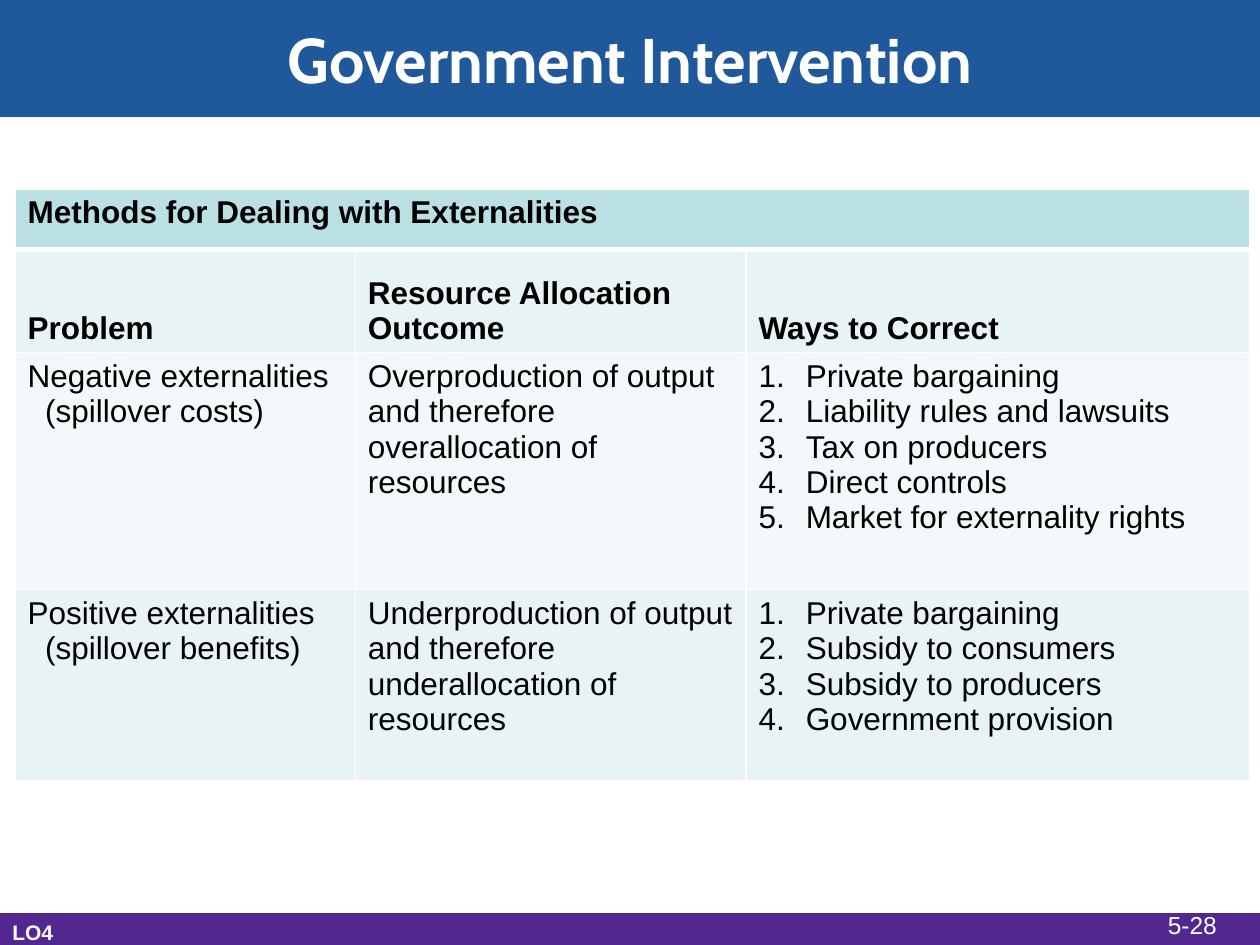
from dataclasses import dataclass

from lxml import etree
from pptx import Presentation
from pptx import util as u
from pptx.dml.color import RGBColor
from pptx.enum import shapes, text
from pptx.oxml import ns

WHITE = RGBColor(0xFF, 0xFF, 0xFF)
BLACK = RGBColor(0x00, 0x00, 0x00)
TITLE_BLUE = RGBColor(0x20, 0x58, 0x9C)
FOOTER_PURPLE = RGBColor(0x52, 0x28, 0x90)
HEADING_TEAL = RGBColor(0xBB, 0xE0, 0xE3)
LIGHT_TEAL = RGBColor(0xE7, 0xF3, 0xF4)
PALE_TEAL = RGBColor(0xF3, 0xF9, 0xFA)

SLIDE_WIDTH, SLIDE_HEIGHT = 720, 540
COLUMN_WIDTHS = (194.4, 223.2, 288)
LIST_INDENT = 27
SECOND_LINE_INDENT = 10


@dataclass(frozen=True)
class Box:
    left: float
    top: float
    width: float
    height: float

    def lengths(self) -> list:
        return [u.Pt(value) for value in (self.left, self.top, self.width, self.height)]


@dataclass(frozen=True)
class Label:
    box: Box
    wording: str
    font: dict
    anchor: text.MSO_ANCHOR = text.MSO_ANCHOR.TOP
    alignment: text.PP_ALIGN = text.PP_ALIGN.LEFT
    wrap: bool = False


@dataclass(frozen=True)
class Row:
    height: float
    fill: RGBColor
    cells: tuple
    bold: bool = False
    anchor: text.MSO_ANCHOR = text.MSO_ANCHOR.TOP
    top_border: float = 1
    bottom_border: float = 1


def font_format(size: float, color: RGBColor, bold: bool = False, name: str = "Arial") -> dict:
    return {"name": name, "size": u.Pt(size), "bold": bold, "color": color}


TITLE_BOX = Box(0, 0, SLIDE_WIDTH, 66.24)
BANDS = (
    (TITLE_BOX, TITLE_BLUE),
    (Box(0, 522, SLIDE_WIDTH, 18), FOOTER_PURPLE),
)
LABELS = (
    Label(TITLE_BOX, "Government Intervention", font_format(36, WHITE, True, "Cabin"),
          text.MSO_ANCHOR.MIDDLE, text.PP_ALIGN.CENTER, True),
    Label(Box(0, 522, 38.16, 21.6), "LO4", font_format(12, WHITE, True)),
    Label(Box(660.24, 516.24, 42.48, 23.76), "5-28", font_format(14, WHITE)),
)
ROWS = (
    Row(34.56, HEADING_TEAL, (("Methods for Dealing with Externalities",),),
        bold=True, bottom_border=3),
    Row(59.04, LIGHT_TEAL, (("Problem",), ("Resource Allocation Outcome",), ("Ways to Correct",)),
        bold=True, anchor=text.MSO_ANCHOR.BOTTOM, top_border=3),
    Row(135.36, PALE_TEAL, (
        ("Negative externalities", "(spillover costs)"),
        ("Overproduction of output and therefore overallocation of resources",),
        ("Private bargaining", "Liability rules and lawsuits", "Tax on producers",
         "Direct controls", "Market for externality rights"))),
    Row(109.44, LIGHT_TEAL, (
        ("Positive externalities", "(spillover benefits)"),
        ("Underproduction of output and therefore underallocation of resources",),
        ("Private bargaining", "Subsidy to consumers", "Subsidy to producers",
         "Government provision"))),
)


def apply_font(font, values: dict) -> None:
    for name, value in values.items():
        if name == "color":
            font.color.rgb = value
        else:
            setattr(font, name, value)


def add_band(slide, box: Box, color: RGBColor) -> None:
    shape = slide.shapes.add_shape(shapes.MSO_SHAPE.RECTANGLE, *box.lengths())
    shape.shadow.inherit = False
    shape.fill.solid()
    shape.fill.fore_color.rgb = color
    shape.line.color.rgb = color
    shape.line.width = u.Pt(0.75)


def add_label(slide, label: Label) -> None:
    frame = slide.shapes.add_textbox(*label.box.lengths()).text_frame
    frame.word_wrap = label.wrap
    frame.vertical_anchor = label.anchor
    paragraph = frame.paragraphs[0]
    paragraph.alignment = label.alignment
    run = paragraph.add_run()
    run.text = label.wording
    apply_font(run.font, label.font)


def set_borders(cell, row: Row) -> None:
    """Put white lines in front of the fill, in the order the schema asks for."""
    properties = cell._tc.get_or_add_tcPr()
    widths = {"lnL": 1, "lnR": 1, "lnT": row.top_border, "lnB": row.bottom_border}
    for position, (tag, width) in enumerate(widths.items()):
        line = etree.Element(ns.qn(f"a:{tag}"), w=str(u.Pt(width)))
        fill = etree.SubElement(line, ns.qn("a:solidFill"))
        etree.SubElement(fill, ns.qn("a:srgbClr"), val=str(WHITE))
        properties.insert(position, line)


def set_indent(paragraph, left: float, first_line: float = 0, numbered: bool = False) -> None:
    properties = paragraph._p.get_or_add_pPr()
    properties.set("marL", str(u.Pt(left)))
    properties.set("indent", str(u.Pt(first_line)))
    if numbered:
        etree.SubElement(properties, ns.qn("a:buFont"), typeface="+mj-lt")
        etree.SubElement(properties, ns.qn("a:buAutoNum"), type="arabicPeriod")


def fill_cell(cell, lines: tuple, row: Row, numbered: bool) -> None:
    cell.vertical_anchor = row.anchor
    frame = cell.text_frame
    for index, wording in enumerate(lines):
        paragraph = frame.add_paragraph() if index else frame.paragraphs[0]
        if numbered:
            set_indent(paragraph, LIST_INDENT, -LIST_INDENT, True)
        elif index:
            set_indent(paragraph, SECOND_LINE_INDENT)
        run = paragraph.add_run()
        run.text = wording
        apply_font(run.font, font_format(18, BLACK, row.bold))


def add_externalities_table(slide) -> None:
    box = Box(8.64, 108, sum(COLUMN_WIDTHS), sum(row.height for row in ROWS))
    table = slide.shapes.add_table(len(ROWS), len(COLUMN_WIDTHS), *box.lengths()).table
    table.first_row = table.horz_banding = False
    for column, width in zip(table.columns, COLUMN_WIDTHS):
        column.width = u.Pt(width)
    for row_index, row in enumerate(ROWS):
        table.rows[row_index].height = u.Pt(row.height)
        for cell in table.rows[row_index].cells:
            cell.fill.solid()
            cell.fill.fore_color.rgb = row.fill
            set_borders(cell, row)
        for column_index, lines in enumerate(row.cells):
            numbered = column_index == 2 and not row.bold
            fill_cell(table.cell(row_index, column_index), lines, row, numbered)
    table.cell(0, 0).merge(table.cell(0, len(COLUMN_WIDTHS) - 1))


def main() -> None:
    presentation = Presentation()
    presentation.slide_width = u.Pt(SLIDE_WIDTH)
    presentation.slide_height = u.Pt(SLIDE_HEIGHT)
    slide = presentation.slides.add_slide(presentation.slide_layouts[6])
    for box, color in BANDS:
        add_band(slide, box, color)
    add_externalities_table(slide)
    for label in LABELS:
        add_label(slide, label)
    presentation.save("out.pptx")


if __name__ == "__main__":
    main()
